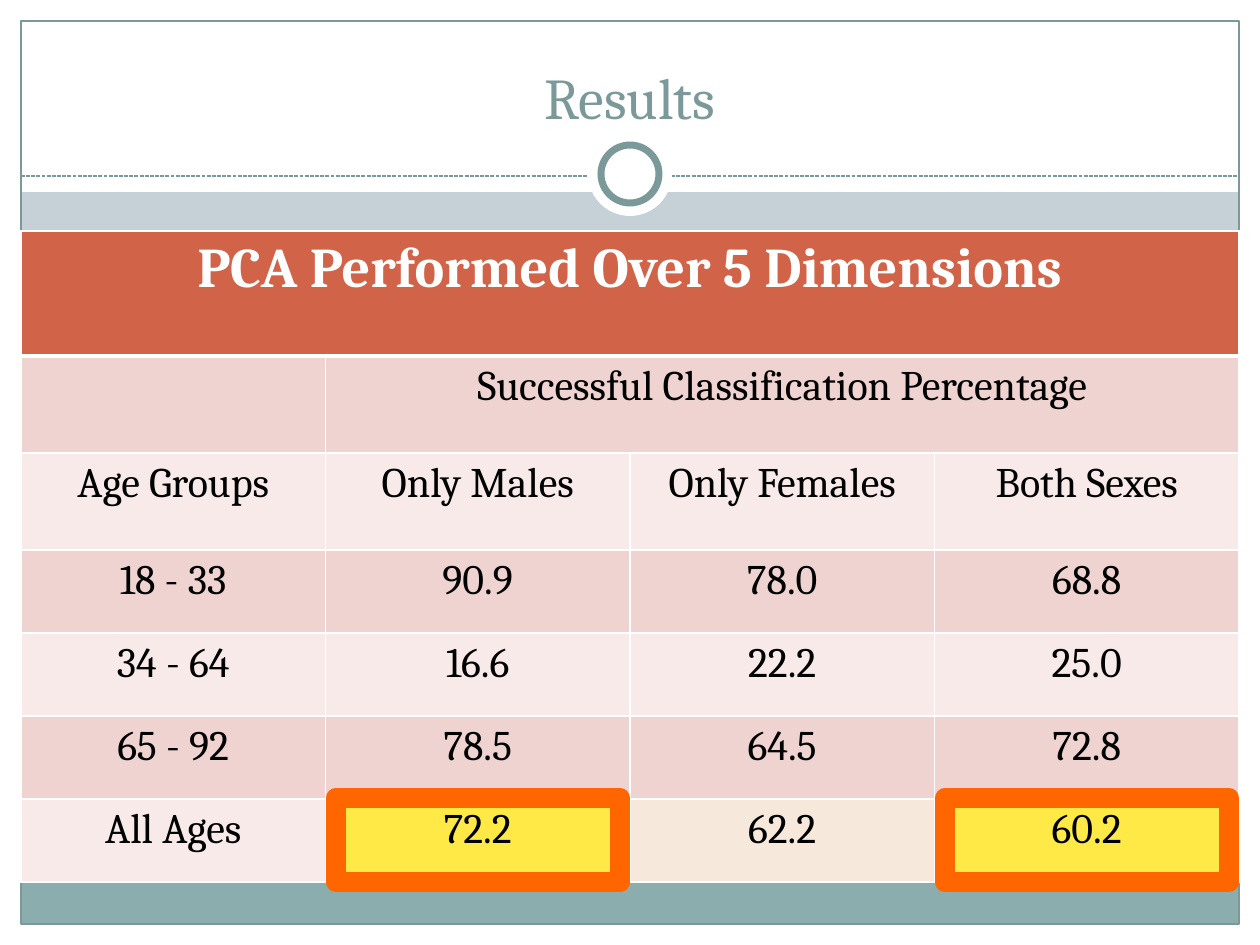
from lxml.etree import SubElement
from pptx import Presentation
from pptx.dml.color import RGBColor
from pptx.enum.dml import MSO_LINE
from pptx.enum.shapes import MSO_CONNECTOR, MSO_SHAPE
from pptx.enum.text import MSO_ANCHOR, PP_ALIGN
from pptx.oxml.ns import qn
from pptx.util import Emu, Pt

PX = 914400 // 126
THEME = {
    "font": "Cambria",
    "title_size": 33, "header_size": 32, "body_size": 24,
    "white": "FFFFFF", "black": "000000", "backdrop": "C5D1D7",
    "teal": "7C999A", "footer": "8CADAE",
    "header": "D16349", "dark_band": "EED3D0", "light_band": "F7EAE9",
    "best": "FFE947", "cream": "F6E9DB", "frame": "FF6600",
}


def add_shape(kind, box, fill=None, line=None, width=0):
    shape = slide.shapes.add_shape(kind, *(Emu(n * PX) for n in box))
    shape.shadow.inherit = False
    if fill:
        shape.fill.solid()
        shape.fill.fore_color.rgb = RGBColor.from_string(THEME[fill])
    else:
        shape.fill.background()
    if line:
        shape.line.color.rgb = RGBColor.from_string(THEME[line])
        shape.line.width = Pt(width)
    else:
        shape.line.fill.background()


def write(frame, text, size, color, bold=False):
    """Put one centred run into a text frame."""
    paragraph = frame.paragraphs[0]
    paragraph.alignment = PP_ALIGN.CENTER
    run = paragraph.add_run()
    run.text = text
    run.font.name = THEME["font"]
    run.font.size = Pt(THEME[size])
    run.font.bold = bold
    run.font.color.rgb = RGBColor.from_string(THEME[color])


deck = Presentation()
deck.slide_width, deck.slide_height = Emu(1260 * PX), Emu(945 * PX)
slide = deck.slides.add_slide(deck.slide_layouts[6])
slide.background.fill.solid()
slide.background.fill.fore_color.rgb = RGBColor.from_string(THEME["backdrop"])

# White margins, footer band and outline
for margin in ((0, 924, 1260, 21), (0, 0, 1260, 192), (0, 0, 21, 945), (1239, 0, 21, 945)):
    add_shape(MSO_SHAPE.RECTANGLE, margin, "white")
add_shape(MSO_SHAPE.RECTANGLE, (21, 881, 1218, 43), "footer")
add_shape(MSO_SHAPE.RECTANGLE, (21, 21, 1218, 903), line="teal", width=0.75)

# Dashed divider with its ring
divider = slide.shapes.add_connector(
    MSO_CONNECTOR.STRAIGHT, *(Emu(n * PX) for n in (21, 176, 1239, 176)))
divider.line.color.rgb = RGBColor.from_string(THEME["teal"])
divider.line.width = Pt(0.75)
divider.line.dash_style = MSO_LINE.SQUARE_DOT
SubElement(divider.element.spPr, qn("a:effectLst"))
add_shape(MSO_SHAPE.OVAL, (588, 132, 84, 84), "white")
add_shape(MSO_SHAPE.OVAL, (601, 145, 58, 58), "white", "teal", 4)

title = slide.shapes.add_textbox(*(Emu(n * PX) for n in (42, 32, 1176, 105))).text_frame
title.word_wrap = True
title.vertical_anchor = MSO_ANCHOR.BOTTOM
write(title, "Results", "title_size", "teal")

# Results table
rows = [
    ["PCA Performed Over 5 Dimensions", "", "", ""],
    ["", "Successful Classification Percentage", "", ""],
    ["Age Groups", "Only Males", "Only Females", "Both Sexes"],
    ["18 - 33", "90.9", "78.0", "68.8"],
    ["34 - 64", "16.6", "22.2", "25.0"],
    ["65 - 92", "78.5", "64.5", "72.8"],
    ["All Ages", "72.2", "62.2", "60.2"],
]
row_heights = [125, 97, 97, 83, 83, 83, 83]
special_fills = {(6, 1): "best", (6, 2): "cream", (6, 3): "best"}

results = slide.shapes.add_table(
    len(rows), 4, *(Emu(n * PX) for n in (21, 231, 1218, sum(row_heights)))).table
results.first_row = results.horz_banding = False
for column in results.columns:
    column.width = Emu(1218 * PX // 4)

for r, (texts, height) in enumerate(zip(rows, row_heights)):
    results.rows[r].height = Emu(height * PX)
    band = "header" if r == 0 else "dark_band" if r % 2 else "light_band"
    for c, text in enumerate(texts):
        cell = results.cell(r, c)
        properties = cell._tc.get_or_add_tcPr()
        for side in "LRTB":
            thick = (r, side) in ((0, "B"), (1, "T"))
            border = SubElement(properties, qn(f"a:ln{side}"), w=str(Pt(3 if thick else 1)))
            paint = SubElement(border, qn("a:solidFill"))
            SubElement(paint, qn("a:srgbClr"), val=THEME["white"])
        cell.fill.solid()
        cell.fill.fore_color.rgb = RGBColor.from_string(THEME[special_fills.get((r, c), band)])
        if text and r == 0:
            write(cell.text_frame, text, "header_size", "white", bold=True)
        elif text:
            write(cell.text_frame, text, "body_size", "black")

results.cell(0, 0).merge(results.cell(0, 3))
results.cell(1, 1).merge(results.cell(1, 3))

# Frames around the highlighted results
for left in (336, 945):
    add_shape(MSO_SHAPE.RECTANGLE, (left, 798, 284, 84), line="frame", width=11.5)

deck.save("out.pptx")
